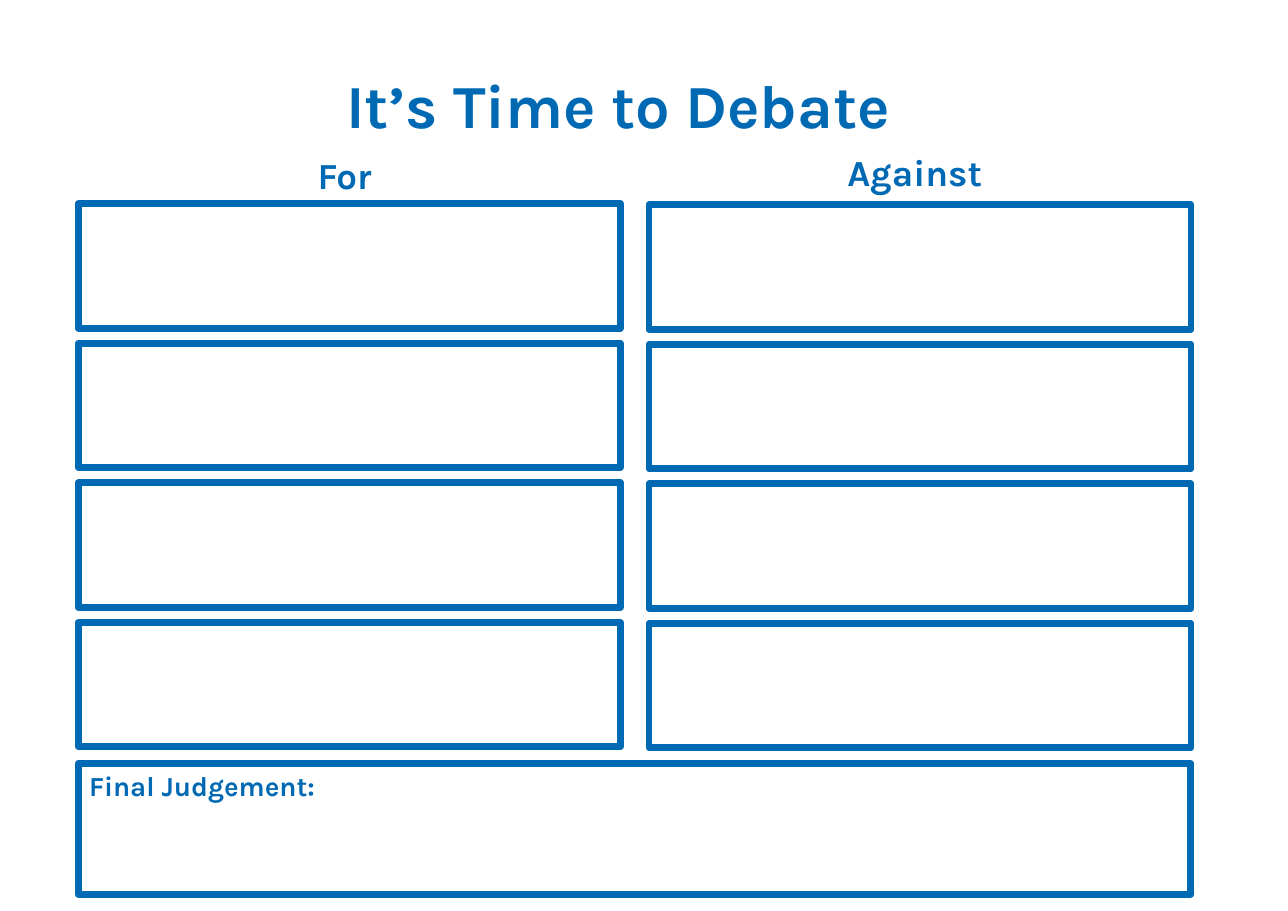
from dataclasses import dataclass

from pptx import Presentation
from pptx.dml.color import RGBColor
from pptx.enum.shapes import MSO_SHAPE
from pptx.enum.text import MSO_ANCHOR, MSO_AUTO_SIZE, PP_ALIGN
from pptx.util import Pt

RECTANGLE = MSO_SHAPE.RECTANGLE
TOP, BOTTOM = MSO_ANCHOR.TOP, MSO_ANCHOR.BOTTOM
LEFT, CENTER = PP_ALIGN.LEFT, PP_ALIGN.CENTER
NO_FIT = MSO_AUTO_SIZE.NONE
TITLE_ONLY = 5

BLUE = "0069B3"
FONT = "Karla"
ROWS = 4
ROW_STEP = 91.2
ARGUMENT_WIDTH, ARGUMENT_HEIGHT = 354.24, 81.36


@dataclass(frozen=True)
class Area:
    left: float
    top: float
    width: float
    height: float

    def lengths(self) -> tuple:
        return tuple(Pt(n) for n in (self.left, self.top, self.width, self.height))


@dataclass(frozen=True)
class Column:
    heading: str
    heading_area: Area
    left: float
    top: float


TITLE_AREA = Area(51.12, 30.24, 715.68, 66.24)
JUDGEMENT_AREA = Area(51.12, 498.96, 727.2, 85.68)
COLUMNS = (
    Column("For ", Area(188.64, 96.48, 79.2, 36), 51.12, 133.2),
    Column("Against ", Area(533.52, 94.32, 134.64, 36), 424.08, 133.92),
)


def colour(value: str) -> RGBColor:
    return RGBColor.from_string(value)


def write(box, text: str, size: float, align=CENTER, anchor=TOP, spacing: float = 1.0) -> None:
    """Put one bold blue line of text in a box."""
    frame = box.text_frame
    frame_format = {"word_wrap": True, "auto_size": NO_FIT, "vertical_anchor": anchor}
    for name, value in frame_format.items():
        setattr(frame, name, value)
    para = frame.paragraphs[0]
    para.alignment = align
    para.line_spacing = spacing
    span = para.add_run()
    span.text = text
    for name, value in {"name": FONT, "size": Pt(size), "bold": True}.items():
        setattr(span.font, name, value)
    span.font.color.rgb = colour(BLUE)


def add_frame(page, area: Area):
    """Draw an empty blue outline."""
    box = page.shapes.add_shape(RECTANGLE, *area.lengths())
    box.shadow.inherit = False
    box.fill.background()
    box.line.color.rgb = colour(BLUE)
    box.line.width = Pt(4.5)
    return box


def add_column(page, column: Column) -> None:
    """Draw a heading and its stack of argument frames."""
    heading = page.shapes.add_textbox(*column.heading_area.lengths())
    write(heading, column.heading, 24)
    for row in range(ROWS):
        top = column.top + row * ROW_STEP
        add_frame(page, Area(column.left, top, ARGUMENT_WIDTH, ARGUMENT_HEIGHT))


def main() -> None:
    deck = Presentation()
    deck.slide_width, deck.slide_height = Pt(841.68), Pt(595.44)
    page = deck.slides.add_slide(deck.slide_layouts[TITLE_ONLY])

    # Title
    title = page.shapes.title
    title.left, title.top, title.width, title.height = TITLE_AREA.lengths()
    write(title, "It’s Time to Debate ", 40, anchor=BOTTOM, spacing=0.9)

    # Arguments for and against
    for column in COLUMNS:
        add_column(page, column)

    # Verdict
    judgement = add_frame(page, JUDGEMENT_AREA)
    write(judgement, "Final Judgement:", 18, align=LEFT)

    deck.save("out.pptx")


if __name__ == "__main__":
    main()
